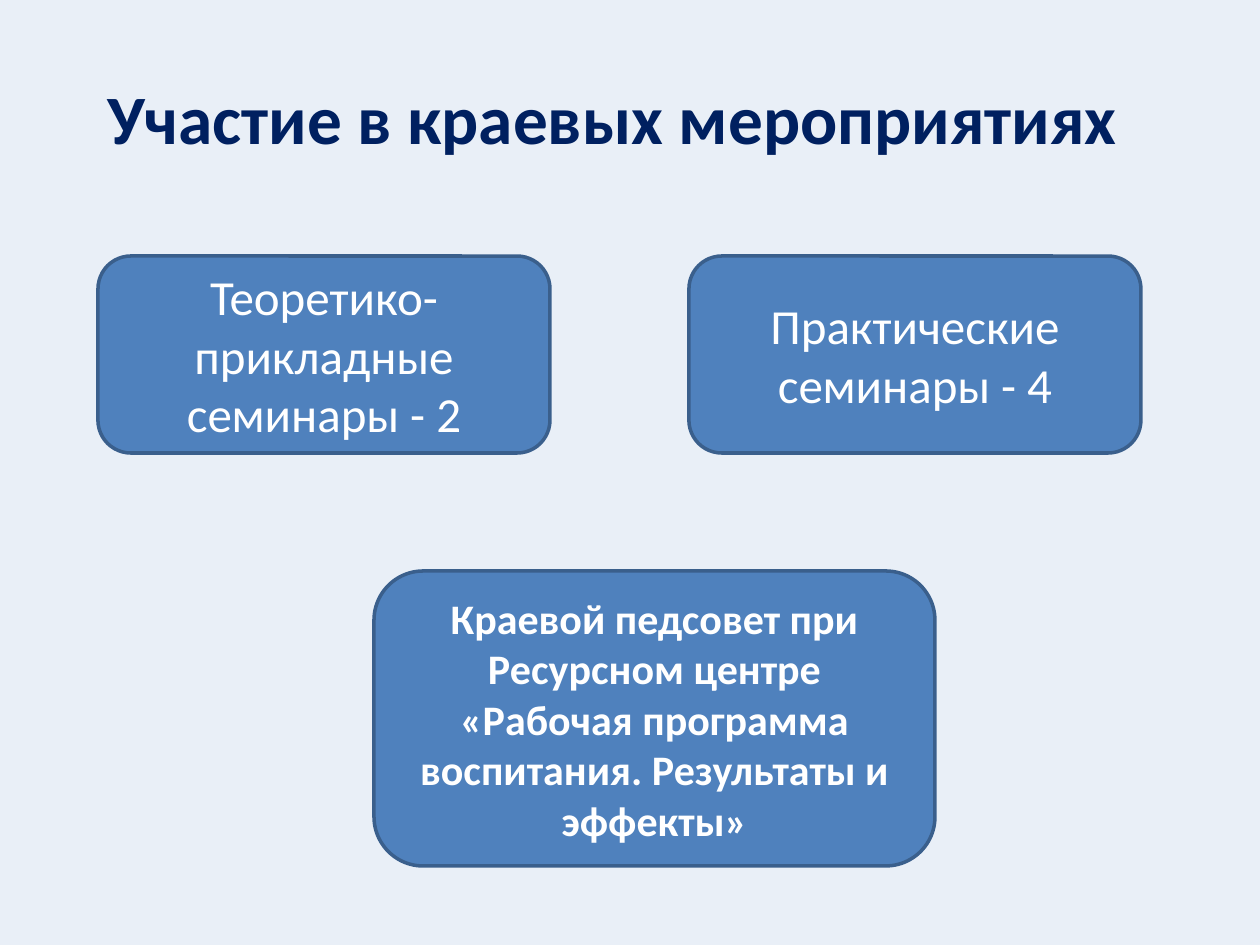
from pptx import Presentation
from pptx.dml.color import RGBColor
from pptx.enum.shapes import MSO_SHAPE
from pptx.enum.text import MSO_ANCHOR, PP_ALIGN
from pptx.util import Emu, Pt

EMU_PER_PX = 914400 // 126


def px(length):
    return Emu(length * EMU_PER_PX)


def color(hex_code):
    return RGBColor.from_string(hex_code)


def write(frame, text, size=28, hex_code="FFFFFF", bold=False):
    frame.word_wrap = True
    frame.vertical_anchor = MSO_ANCHOR.MIDDLE
    paragraph = frame.paragraphs[0]
    paragraph.alignment = PP_ALIGN.CENTER
    run = paragraph.add_run()
    run.text = text
    run.font.name = "Calibri"
    run.font.size = Pt(size)
    run.font.bold = bold
    run.font.color.rgb = color(hex_code)


class EventSlide:
    BACKGROUND = "E9EFF7"
    HEADING = "002060"
    CARD_FILL = "4F81BD"
    CARD_LINE = "3A5F8C"

    def __init__(self, presentation):
        self.slide = presentation.slides.add_slide(presentation.slide_layouts[6])
        fill = self.slide.background.fill
        fill.solid()
        fill.fore_color.rgb = color(self.BACKGROUND)

    def heading(self, text, left, top, width, height, right_inset):
        box = self.slide.shapes.add_textbox(px(left), px(top), px(width), px(height))
        box.text_frame.margin_right = px(right_inset)
        write(box.text_frame, text, size=39.6, hex_code=self.HEADING, bold=True)

    def card(self, text, left, top, width, height, **text_format):
        card = self.slide.shapes.add_shape(
            MSO_SHAPE.ROUNDED_RECTANGLE, px(left), px(top), px(width), px(height))
        card.shadow.inherit = False
        card.fill.solid()
        card.fill.fore_color.rgb = color(self.CARD_FILL)
        card.line.color.rgb = color(self.CARD_LINE)
        card.line.width = Pt(2)
        write(card.text_frame, text, **text_format)


def main():
    presentation = Presentation()
    presentation.slide_width = px(1260)
    presentation.slide_height = px(945)
    events = EventSlide(presentation)

    # Heading, set slightly left of centre by its right inset
    events.heading("Участие в краевых мероприятиях", 63, 38, 1134, 158, right_inset=47)

    # Seminars side by side
    seminars = ["Теоретико-прикладные семинары - 2", "Практические семинары - 4"]
    for column, seminar in enumerate(seminars):
        events.card(seminar, 98 + column * 591, 256, 452, 197)

    # Regional teachers' council
    events.card(
        "Краевой педсовет при Ресурсном центре «Рабочая программа воспитания. "
        "Результаты и эффекты»",
        374, 571, 561, 295, size=24, bold=True)

    presentation.save("out.pptx")


if __name__ == "__main__":
    main()
